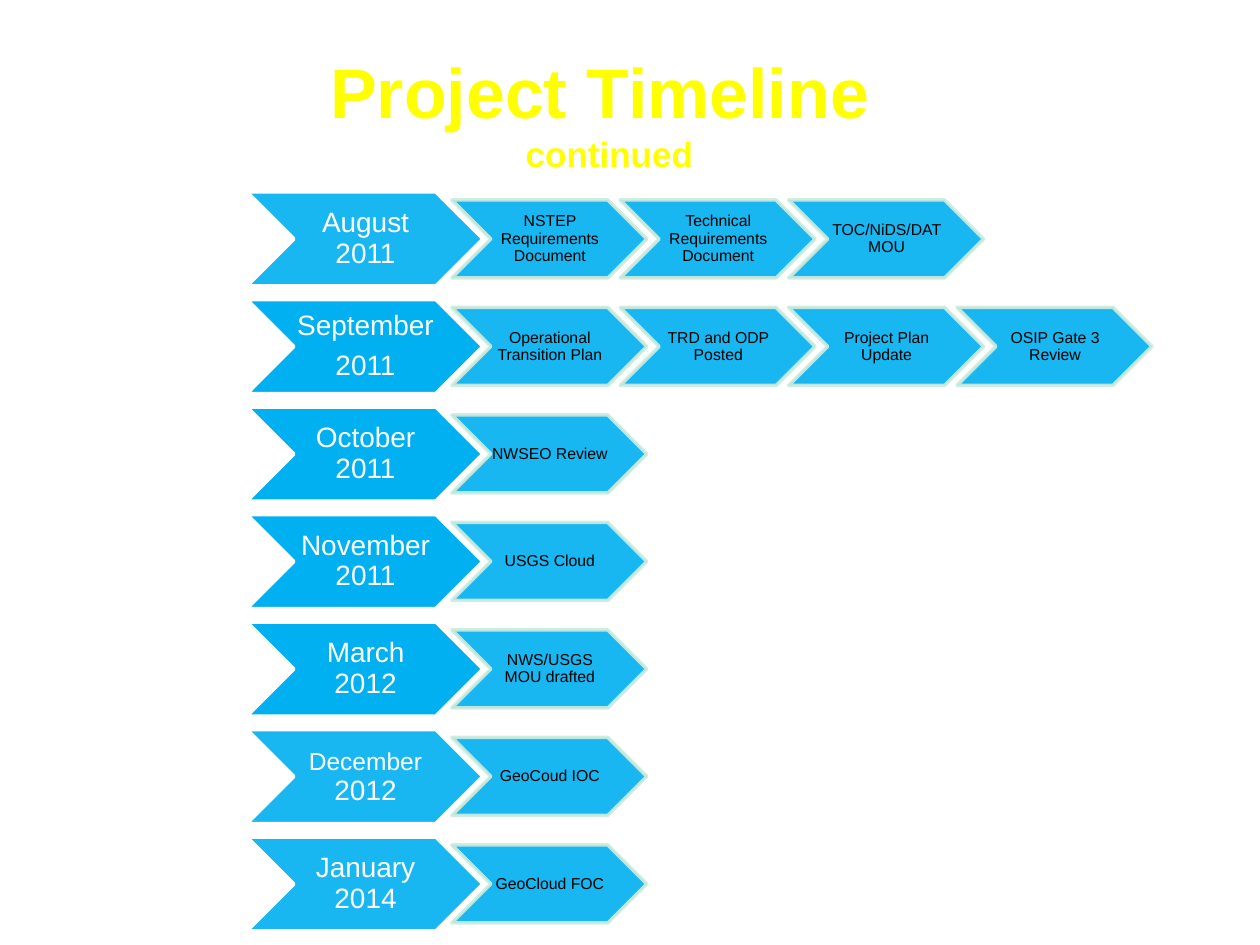
import pptx
import pptx.util
import pptx.dml.color
import pptx.enum.shapes
import pptx.enum.text
import pptx.oxml
import pptx.oxml.ns

RGB = pptx.dml.color.RGBColor
YELLOW = RGB(0xFF, 0xFF, 0x00)
BLUE = RGB(0x00, 0xB0, 0xF0)
MINT = RGB(0xCC, 0xEC, 0xDE)
WHITE = RGB(0xFF, 0xFF, 0xFF)
BLACK = RGB(0x00, 0x00, 0x00)

SCALE = 914400 / 126
CHEVRON = pptx.enum.shapes.MSO_SHAPE.CHEVRON
CENTER = pptx.enum.text.PP_ALIGN.CENTER
MIDDLE = pptx.enum.text.MSO_ANCHOR.MIDDLE

# Month as paragraphs of (text, size) runs, whether it is see-through, steps
ROWS = [
    ([[("August 2011", 16)]], True,
     ["NSTEP Requirements Document", "Technical Requirements Document",
      "TOC/NiDS/DAT MOU"]),
    ([[("September", 16)], [("2011", 16)]], False,
     ["Operational Transition Plan", "TRD and ODP Posted",
      "Project Plan Update", "OSIP Gate 3 Review"]),
    ([[("October 2011", 16)]], False, ["NWSEO Review"]),
    ([[("November 2011", 16)]], False, ["USGS Cloud"]),
    ([[("March 2012", 16)]], False, ["NWS/USGS MOU drafted"]),
    ([[("December", 14), (" 2012", 16)]], True, ["GeoCoud IOC"]),
    ([[("January 2014", 16)]], True, ["GeoCloud FOC"]),
]


def px(num):
    return pptx.util.Emu(round(num * SCALE))


def style(item, form):
    for key, val in form.items():
        setattr(item, key, val)


def fade(fill):
    """Make a solid fill 90% opaque."""
    tag = fill._xPr.find(".//" + pptx.oxml.ns.qn("a:srgbClr"))
    tag.append(pptx.oxml.parse_xml(
        '<a:alpha %s val="90000"/>' % pptx.oxml.ns.nsdecls("a")))


def cast(run):
    """Give the run a black drop shadow."""
    run._r.get_or_add_rPr().find(pptx.oxml.ns.qn("a:solidFill")).addnext(
        pptx.oxml.parse_xml(
            '<a:effectLst %s><a:outerShdw dist="38100" dir="2700000">'
            '<a:srgbClr val="000000"/></a:outerShdw></a:effectLst>'
            % pptx.oxml.ns.nsdecls("a")))


def add_run(para, text, size, color, bold=False):
    run = para.add_run()
    run.text = text
    style(run.font, {"name": "Arial", "size": pptx.util.Pt(size), "bold": bold})
    run.font.color.rgb = color
    return run


def add_box(shapes, box, inset):
    frame = shapes.add_textbox(*map(px, box)).text_frame
    style(frame, {"word_wrap": True, "vertical_anchor": MIDDLE, **inset})
    return frame


def add_arrow(shapes, box, paras, color, edge, clear, clear_edge):
    """Chevron with its label in the flat part between notch and tip."""
    x, y, w, h = box
    arrow = shapes.add_shape(CHEVRON, *map(px, box))
    arrow.shadow.inherit = False
    arrow.fill.solid()
    arrow.fill.fore_color.rgb = BLUE
    arrow.line.color.rgb = edge
    arrow.line.width = pptx.util.Pt(2)
    if clear:
        fade(arrow.fill)
    if clear_edge:
        fade(arrow.line.fill)

    frame = add_box(shapes, (x + h / 2, y, w - h, h), {
        "margin_left": px(1), "margin_right": 0,
        "margin_top": px(1), "margin_bottom": px(1)})
    for num, runs in enumerate(paras):
        para = frame.add_paragraph() if num else frame.paragraphs[0]
        style(para, {"alignment": CENTER, "line_spacing": 0.9})
        if num < len(paras) - 1:
            para.space_after = pptx.util.Pt(5.6)
        for text, size in runs:
            add_run(para, text, size, color)


def add_title(slide, box):
    frame = add_box(slide.shapes, box, {})
    para = frame.paragraphs[0]
    para.alignment = CENTER
    cast(add_run(para, "Project Timeline ", 40, YELLOW, True))
    para.add_line_break()
    cast(add_run(para, "continued", 20, YELLOW, True))


def add_rows(slide, box):
    x, y, w, h = box
    shapes = slide.shapes.add_group_shape().shapes
    pitch = (h - 94) / (len(ROWS) - 1)
    for row, (month, clear, steps) in enumerate(ROWS):
        top = y + row * pitch
        add_arrow(shapes, (x, top, 236, 94), month, WHITE, WHITE, clear, False)
        for col, step in enumerate(steps):
            spot = (x + w - 195 - (3 - col) * 168.4, top + 8, 195, 78)
            add_arrow(shapes, spot, [[(step, 9)]], BLACK, MINT, True, True)


def main():
    deck = pptx.Presentation()
    style(deck, {"slide_width": px(1260), "slide_height": px(945)})
    slide = deck.slides.add_slide(deck.slide_layouts[6])
    add_title(slide, (74, 33, 1071, 157))
    add_rows(slide, (247, 192, 905, 739))
    deck.save("out.pptx")


if __name__ == "__main__":
    main()
